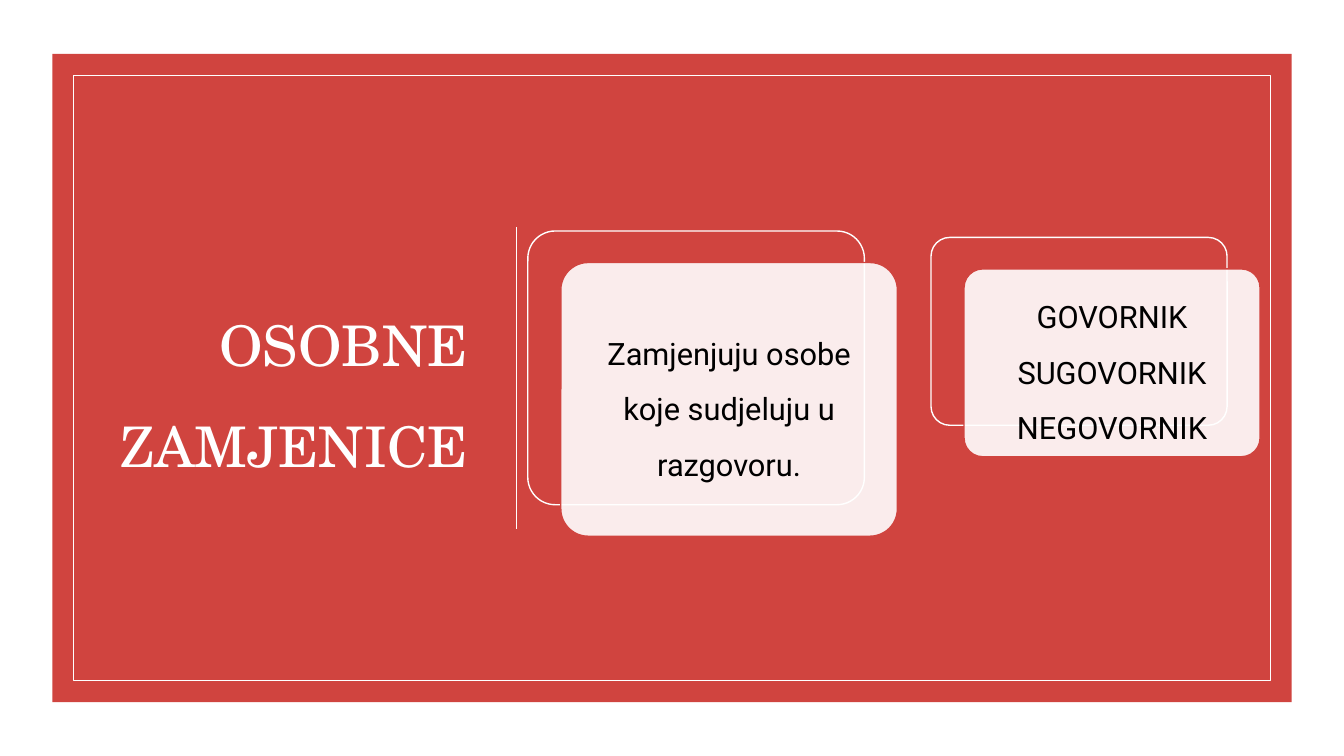
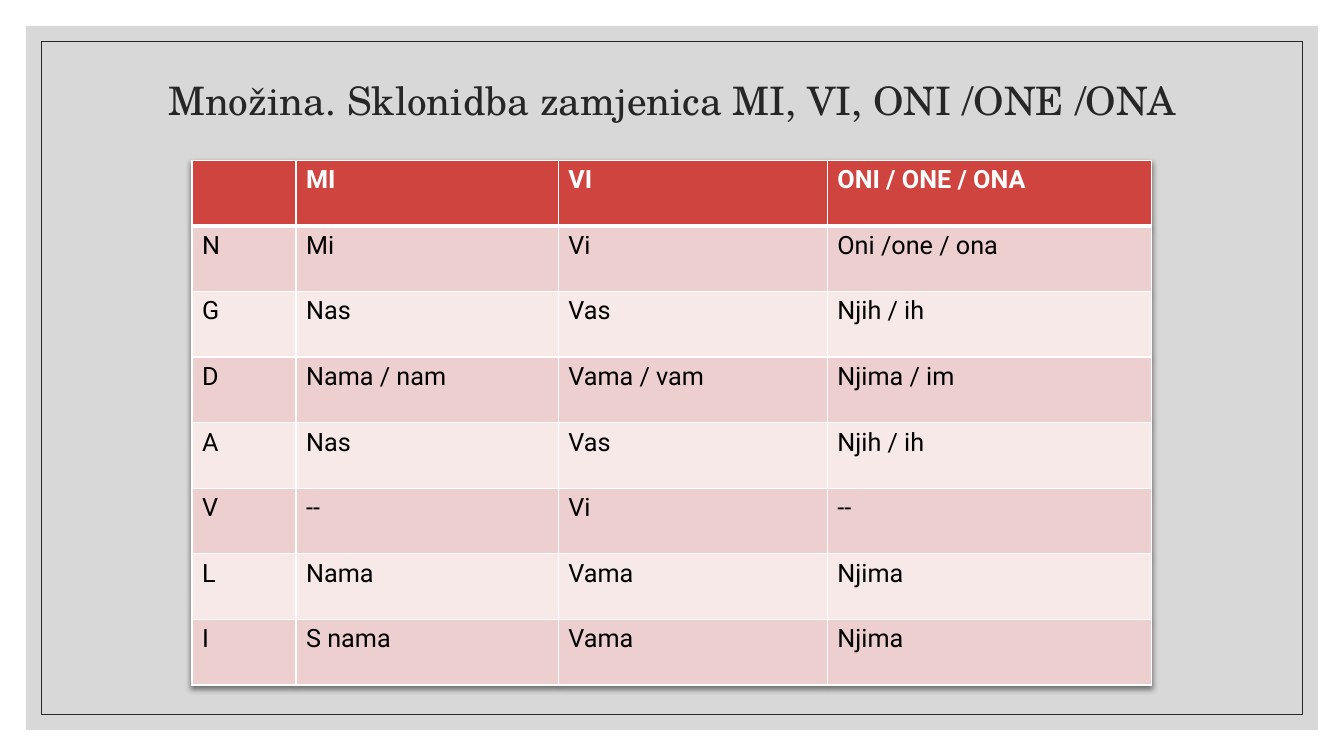
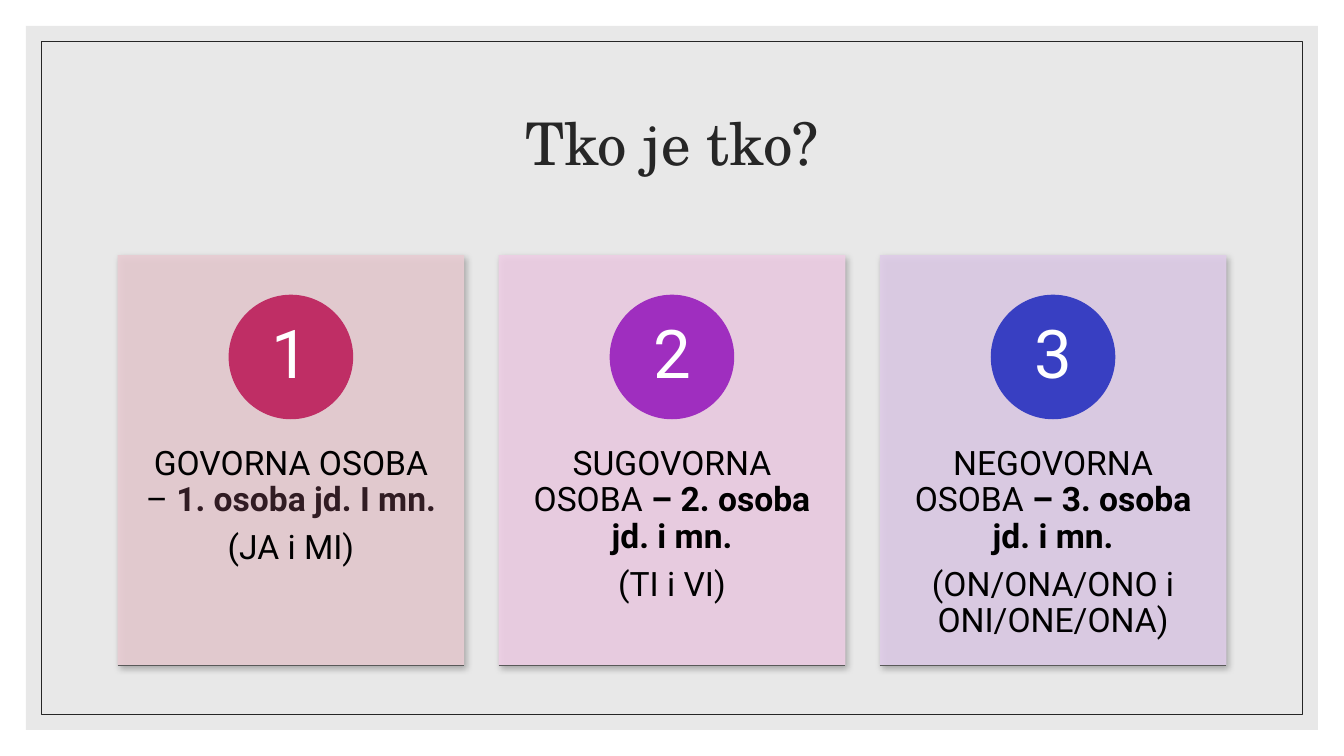
"""Builds three slides on personal pronouns."""
from lxml import etree
from pptx import Presentation
from pptx.dml.color import RGBColor
from pptx.enum.shapes import MSO_CONNECTOR, MSO_SHAPE
from pptx.enum.text import MSO_ANCHOR, PP_ALIGN
from pptx.oxml.ns import qn
from pptx.util import Pt

RECT, ROUND, OVAL = MSO_SHAPE.RECTANGLE, MSO_SHAPE.ROUNDED_RECTANGLE, MSO_SHAPE.OVAL
LINE = MSO_CONNECTOR.STRAIGHT
LEFT, MID, RIGHT = PP_ALIGN.LEFT, PP_ALIGN.CENTER, PP_ALIGN.RIGHT
TOP, CENTER = MSO_ANCHOR.TOP, MSO_ANCHOR.MIDDLE
WIDE, HIGH = 960, 540
HEAD, BODY = "TeX Gyre Schola", "Roboto"
COLORS = {
    "white": "FFFFFF", "black": "000000", "ink": "262626", "red": "D0443F",
    "gray": "BFBFBF", "pale": "D9D9D9", "dark": "EECFCF", "light": "F7E9E8",
    "plum": "311C23", "edge": "595959",
    "rose": "E8CDD3", "pink": "EECFE5", "lilac": "DFCDE8",
    "berry": "BF2E65", "violet": "9F2EBF", "blue": "383FC2",
}


def rgb(name):
    return RGBColor.from_string(COLORS[name])


def node(parent, tag, **attrs):
    item = etree.SubElement(parent, qn(tag))
    for key, value in attrs.items():
        item.set(key, str(value))
    return item


def shade(effects, blur, dist, angle, alpha):
    cast = node(effects, "a:outerShdw", blurRad=Pt(blur), dist=Pt(dist),
                dir=angle * 60000, algn="tl", rotWithShape=0)
    tint = node(cast, "a:srgbClr", val=COLORS["black"])
    node(tint, "a:alpha", val=alpha * 1000)


class Deck:
    def __init__(self):
        self.show = Presentation()
        self.show.slide_width, self.show.slide_height = Pt(WIDE), Pt(HIGH)
        self.slide = None

    def page(self):
        self.slide = self.show.slides.add_slide(self.show.slide_layouts[6])

    def put(self, frame, paras, size, color="black", face=BODY, align=MID,
            space=1.0, after=0, bold=False):
        for i, runs in enumerate(paras):
            para = frame.add_paragraph() if i else frame.paragraphs[0]
            para.alignment, para.line_spacing = align, space
            para.space_after = Pt(after)
            font = para.font
            font.name, font.size, font.bold = face, Pt(size), bold
            font.color.rgb = rgb(color)
            for words, heavy, tint in runs:
                run = para.add_run()
                run.text = words
                if heavy:
                    run.font.bold = True
                if tint:
                    run.font.color.rgb = rgb(tint)

    def fit(self, frame, across, down, anchor=CENTER):
        frame.word_wrap, frame.vertical_anchor = True, anchor
        frame.margin_left = frame.margin_right = Pt(across)
        frame.margin_top = frame.margin_bottom = Pt(down)

    def shape(self, kind, x, y, w, h, fill=None, line=None, width=1, alpha=None):
        item = self.slide.shapes.add_shape(kind, Pt(x), Pt(y), Pt(w), Pt(h))
        item.shadow.inherit = False
        if fill:
            item.fill.solid()
            item.fill.fore_color.rgb = rgb(fill)
            if alpha:
                tint = item.element.spPr.find(qn("a:solidFill"))[0]
                node(tint, "a:alpha", val=alpha * 1000)
        else:
            item.fill.background()
        if line:
            item.line.color.rgb = rgb(line)
            item.line.width = Pt(width)
        else:
            item.line.fill.background()
        return item

    def frame(self, outer, inner, fill, line, alpha=None):
        for (x, y), paint in ((outer, {"fill": fill, "alpha": alpha}),
                              (inner, {"line": line, "width": 0.5})):
            self.shape(RECT, x, y, WIDE - 2 * x, HIGH - 2 * y, **paint)

    def plain(self, fill):
        self.frame((18.6, 18.6), (29.4, 29.4), fill, "ink", 60)

    def text(self, x, y, w, h, paras, size, across=7.2, down=3.6, anchor=CENTER, **style):
        box = self.slide.shapes.add_textbox(Pt(x), Pt(y), Pt(w), Pt(h))
        self.fit(box.text_frame, across, down, anchor)
        self.put(box.text_frame, paras, size, **style)

    def title(self, x, y, w, h, words, size, color="ink", align=MID, space=0.9):
        self.text(x, y, w, h, [[(words, False, None)]], size,
                  color=color, face=HEAD, align=align, space=space)

    def line(self, x1, y1, x2, y2, color, width):
        item = self.slide.shapes.add_connector(LINE, Pt(x1), Pt(y1), Pt(x2), Pt(y2))
        item.line.color.rgb = rgb(color)
        item.line.width = Pt(width)
        node(item.element.spPr, "a:effectLst")

    def panel(self, x, y, w, h, words):
        back = self.shape(ROUND, x, y, w, h, "red", "white")
        front = self.shape(ROUND, x + 23.6, y + 22.5, w, h, "white", "red", alpha=90)
        for item in (back, front):
            item.adjustments[0] = 0.1
        self.fit(front.text_frame, 6.6, 6.6)
        self.put(front.text_frame, [[(words, False, None)]], 22, space=1.5, after=7.7)

    def card(self, x, y, w, h, fill, dot, digit, paras):
        back = self.shape(RECT, x, y, w, h, fill, alpha=90)
        shade(back.element.spPr.find(qn("a:effectLst")), 4.5, 2.6, 53, 30)
        self.text(x, y + 110.8, w, 175.7, paras, 24, 19.4, 25.9, TOP,
                  space=0.9, after=8.4)
        size = 88
        disc = self.shape(OVAL, x + (w - size) / 2, y + 28.8, size, size, dot, dot)
        self.fit(disc.text_frame, 7, 0.7)
        self.put(disc.text_frame, [[(digit, False, None)]], 48, "white",
                 space=0.9, after=16.8)
        self.line(x, y + h, x + w, y + h, "edge", 0.75)

    def edges(self, cell, row):
        props = cell._tc.get_or_add_tcPr()
        thick = {"a:lnT": row == 1, "a:lnB": row == 0}
        for i, tag in enumerate(("a:lnL", "a:lnR", "a:lnT", "a:lnB")):
            side = node(props, tag, w=Pt(3 if thick.get(tag) else 1))
            node(node(side, "a:solidFill"), "a:srgbClr", val=COLORS["white"])
            props.insert(i, side)

    def table(self, x, y, cols, tall, rows):
        holder = self.slide.shapes.add_table(
            len(rows), len(cols), Pt(x), Pt(y), Pt(sum(cols)), Pt(tall * len(rows)))
        grid = holder.table
        grid.horz_banding = False
        effects = etree.Element(qn("a:effectLst"))
        shade(effects, 4, 2, 90, 50)
        grid._tbl.tblPr.insert(0, effects)
        for col, width in zip(grid.columns, cols):
            col.width = Pt(width)
        for r, row in enumerate(rows):
            grid.rows[r].height = Pt(tall)
            fill = "red" if r == 0 else "dark" if r % 2 else "light"
            for c, words in enumerate(row):
                cell = grid.cell(r, c)
                cell.fill.solid()
                cell.fill.fore_color.rgb = rgb(fill)
                self.edges(cell, r)
                if words:
                    self.put(cell.text_frame, [[(words, False, None)]], 18,
                             "black" if r else "white", align=LEFT, bold=r == 0)


CASES = [
    ("", "MI", "VI", "ONI / ONE / ONA"),
    ("N", "Mi", "Vi", "Oni /one / ona"),
    ("G", "Nas", "Vas", "Njih / ih"),
    ("D", "Nama / nam", "Vama / vam", "Njima / im"),
    ("A", "Nas", "Vas", "Njih / ih"),
    ("V", "--", "Vi", "--"),
    ("L", "Nama", "Vama", "Njima"),
    ("I", "S nama", "Vama", "Njima"),
]
ROLES = [
    ("rose", "berry", "GOVORNA OSOBA – ", "1. osoba jd. I mn.", "plum", "(JA i MI)"),
    ("pink", "violet", "SUGOVORNA OSOBA ", "– 2. osoba jd. i mn.", None, "(TI i VI)"),
    ("lilac", "blue", "NEGOVORNA OSOBA ", "– 3. osoba jd. i mn.", None,
     "(ON/ONA/ONO i ONI/ONE/ONA)"),
]


def main():
    deck = Deck()

    deck.page()
    deck.frame((37.4, 38.5), (52.5, 54), "red", "white")
    deck.line(369, 162, 369, 378, "white", 1.25)
    deck.title(68.4, 78.5, 273, 382.3, "OSOBNE ZAMJENICE", 40, "white", RIGHT, 1.5)
    deck.panel(377, 165, 240.4, 195.5, "Zamjenjuju osobe koje sudjeluju u razgovoru.")
    deck.panel(665, 169.6, 211.5, 134.2, "GOVORNIK SUGOVORNIK NEGOVORNIK")

    deck.page()
    deck.plain("gray")
    deck.title(84, 50.4, 792, 46, "Množina. Sklonidba zamjenica MI, VI, ONI /ONE /ONA", 28)
    deck.table(137.1, 114.5, (74.4, 187.3, 192.2, 231.7), 46.88, CASES)

    deck.page()
    deck.plain("pale")
    deck.title(84, 50.4, 792, 108, "Tko je tko?", 42)
    for i, (fill, dot, role, person, tint, words) in enumerate(ROLES):
        paras = [[(role, False, None), (person, True, tint)], [(words, False, None)]]
        deck.card(84 + i * 272.2, 182.2, 247.6, 293, fill, dot, str(i + 1), paras)

    deck.show.save("out.pptx")


if __name__ == "__main__":
    main()
